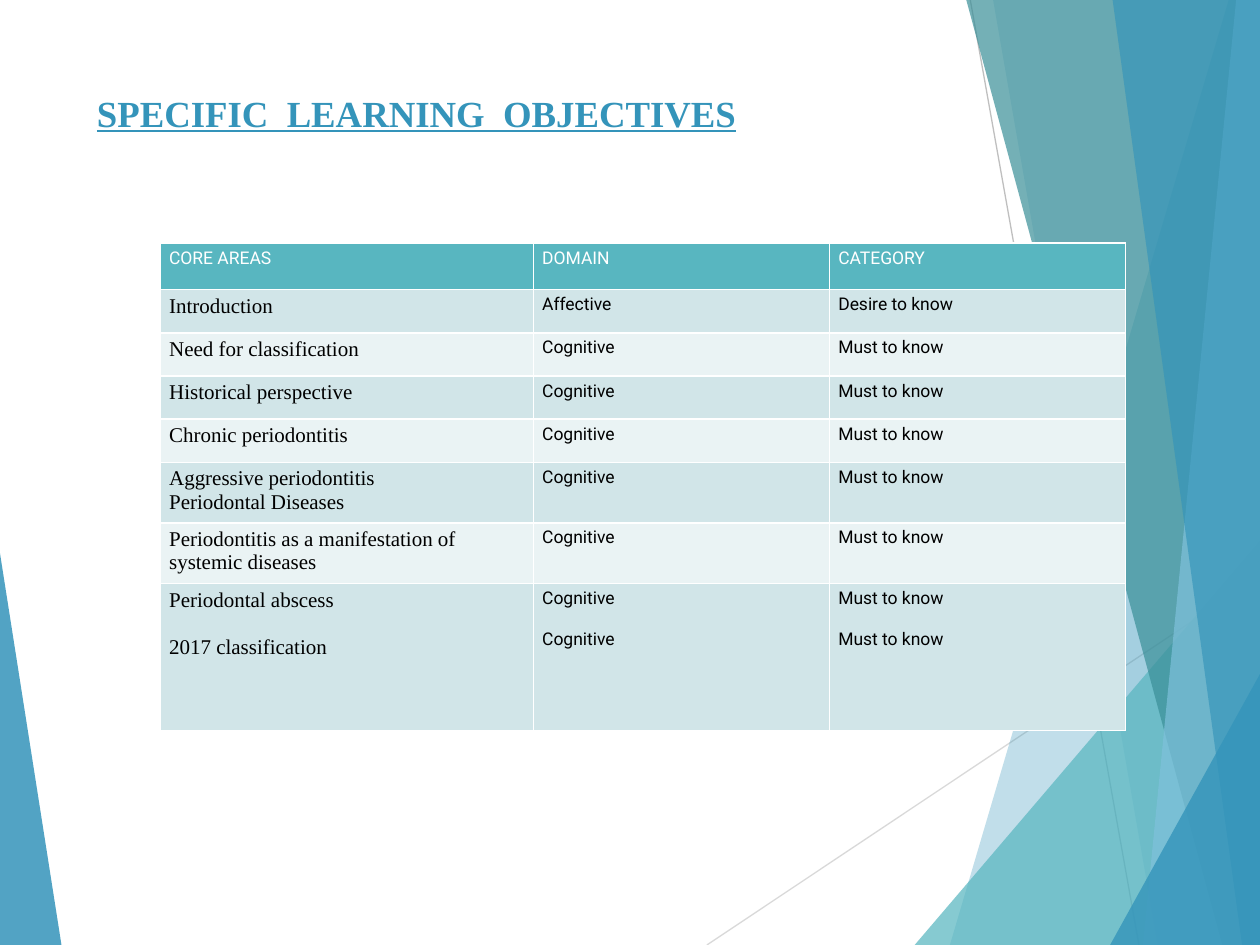
from pptx import Presentation
from pptx.dml.color import RGBColor
from pptx.enum.shapes import MSO_CONNECTOR
from pptx.enum.text import MSO_ANCHOR, PP_ALIGN
from pptx.oxml.ns import qn
from pptx.util import Cm, Pt
from lxml.etree import SubElement

WIDTH, HEIGHT = 25.4, 19.05
COLOURS = {
    "blue": "3494BA", "sky": "7FC1DB", "teal": "58B6C0", "dark teal": "3A8F98",
    "band dark": "D1E5E8", "band light": "EAF3F4", "white": "FFFFFF",
    "black": "000000", "light grey": "D9D9D9", "grey": "BFBFBF",
}
SERIF, SANS = "Times New Roman", "Roboto"


class SlideBuilder:
    def __init__(self, presentation):
        self.slide = presentation.slides.add_slide(presentation.slide_layouts[5])

    def colour(self, name):
        return RGBColor.from_string(COLOURS[name])

    def style(self, paragraph, font_name, size, colour):
        paragraph.font.name = font_name
        paragraph.font.size = Pt(size)
        paragraph.font.color.rgb = self.colour(colour)

    def title(self, text, left, top, width, height):
        shape = self.slide.shapes.title
        shape.left, shape.top = Cm(left), Cm(top)
        shape.width, shape.height = Cm(width), Cm(height)
        frame = shape.text_frame
        frame.text = text
        frame.word_wrap = True
        frame.vertical_anchor = MSO_ANCHOR.TOP
        paragraph = frame.paragraphs[0]
        paragraph.alignment = PP_ALIGN.LEFT
        self.style(paragraph, SERIF, 21, "blue")
        paragraph.font.bold = paragraph.font.underline = True

    def facet(self, points, colour, opacity):
        corners = [(Cm(x), Cm(y)) for x, y in points]
        builder = self.slide.shapes.build_freeform(*corners[0])
        builder.add_line_segments(corners[1:], close=True)
        shape = builder.convert_to_shape()
        shape.shadow.inherit = False
        shape.line.fill.background()
        shape.fill.solid()
        shape.fill.fore_color.rgb = self.colour(colour)
        colour_element = shape._element.spPr.find(qn("a:solidFill"))[0]
        SubElement(colour_element, qn("a:alpha"), val=str(opacity * 1000))

    def line(self, start, end, colour):
        connector = self.slide.shapes.add_connector(
            MSO_CONNECTOR.STRAIGHT, *(Cm(value) for value in start + end))
        connector.line.color.rgb = self.colour(colour)
        connector.line.width = Pt(0.75)
        SubElement(connector._element.spPr, qn("a:effectLst"))

    def cell(self, cell, lines, fill, font_name, size, colour, gap):
        cell.margin_left = cell.margin_right = Cm(0.18)
        cell.margin_top = cell.margin_bottom = Cm(0.1)
        cell.text = "\n".join(lines)
        for index, paragraph in enumerate(cell.text_frame.paragraphs):
            self.style(paragraph, font_name, size, colour)
            if index:
                paragraph.space_before = Pt(gap)
        properties = cell._tc.get_or_add_tcPr()
        for side in ("lnL", "lnR", "lnT", "lnB"):
            border = SubElement(properties, qn(f"a:{side}"), w=str(Pt(1)))
            border_fill = SubElement(border, qn("a:solidFill"))
            SubElement(border_fill, qn("a:srgbClr"), val=COLOURS["white"])
        cell.fill.solid()
        cell.fill.fore_color.rgb = self.colour(fill)

    def table(self, rows, left, top, widths, heights):
        table = self.slide.shapes.add_table(
            len(rows), len(widths), Cm(left), Cm(top),
            Cm(sum(widths)), Cm(sum(heights))).table
        table.first_row = table.horz_banding = False
        for column, width in zip(table.columns, widths):
            column.width = Cm(width)
        for row_index, (values, height) in enumerate(zip(rows, heights)):
            table.rows[row_index].height = Cm(height)
            is_header = row_index == 0
            band = "band dark" if row_index % 2 else "band light"
            # The last row holds two topics set one line apart
            is_last = row_index == len(rows) - 1
            for column_index, lines in enumerate(values):
                is_topic = column_index == 0 and not is_header
                size = 12 if is_topic else 10
                self.cell(table.cell(row_index, column_index), lines,
                          "teal" if is_header else band,
                          SERIF if is_topic else SANS, size,
                          "white" if is_header else "black",
                          size * 1.15 if is_last else 0)


def main():
    presentation = Presentation()
    presentation.slide_width, presentation.slide_height = Cm(WIDTH), Cm(HEIGHT)
    builder = SlideBuilder(presentation)

    # Left wedge and thin lines
    builder.facet([(0, 11.15), (1.24, HEIGHT), (0, HEIGHT)], "blue", 85)
    builder.line((14.25, HEIGHT), (WIDTH, 11.61), "light grey")
    builder.line((19.56, 0), (22.96, HEIGHT), "grey")

    # Right facets: top point, bottom x, colour, opacity
    for (top_x, top_y), bottom_x, colour, opacity in [
        ((24.77, 0), 19.15, "blue", 30),
        ((20.02, 0), 23.34, "blue", 20),
        ((WIDTH, 10.9), 18.44, "teal", 72),
        ((19.48, 0), 24.64, "dark teal", 70),
        ((24.92, 0), 23.04, "sky", 70),
        ((22.43, 0), 25.04, "blue", 65),
        ((WIDTH, 13.59), 22.38, "blue", 80),
    ]:
        builder.facet([(top_x, top_y), (bottom_x, HEIGHT),
                       (WIDTH, HEIGHT), (WIDTH, top_y)], colour, opacity)

    # Title
    builder.title("SPECIFIC  LEARNING  OBJECTIVES", 1.7, 1.7, 17.63, 3.66)

    # Objectives table
    cognitive, must = ["Cognitive"], ["Must to know"]
    must_know_topics = [
        ["Need for classification"],
        ["Historical perspective"],
        ["Chronic periodontitis"],
        ["Aggressive periodontitis", "Periodontal Diseases"],
        ["Periodontitis as a manifestation of systemic diseases"],
    ]
    rows = [
        [["CORE AREAS"], ["DOMAIN"], ["CATEGORY"]],
        [["Introduction"], ["Affective"], ["Desire to know"]],
        *[[topic, cognitive, must] for topic in must_know_topics],
        [["Periodontal abscess", "2017 classification"], cognitive * 2, must * 2],
    ]
    builder.table(rows, 3.23, 4.9, [7.52, 5.97, 5.97],
                  [0.94] + [0.87] * 4 + [1.22] * 2 + [2.97])

    presentation.save("out.pptx")


if __name__ == "__main__":
    main()
